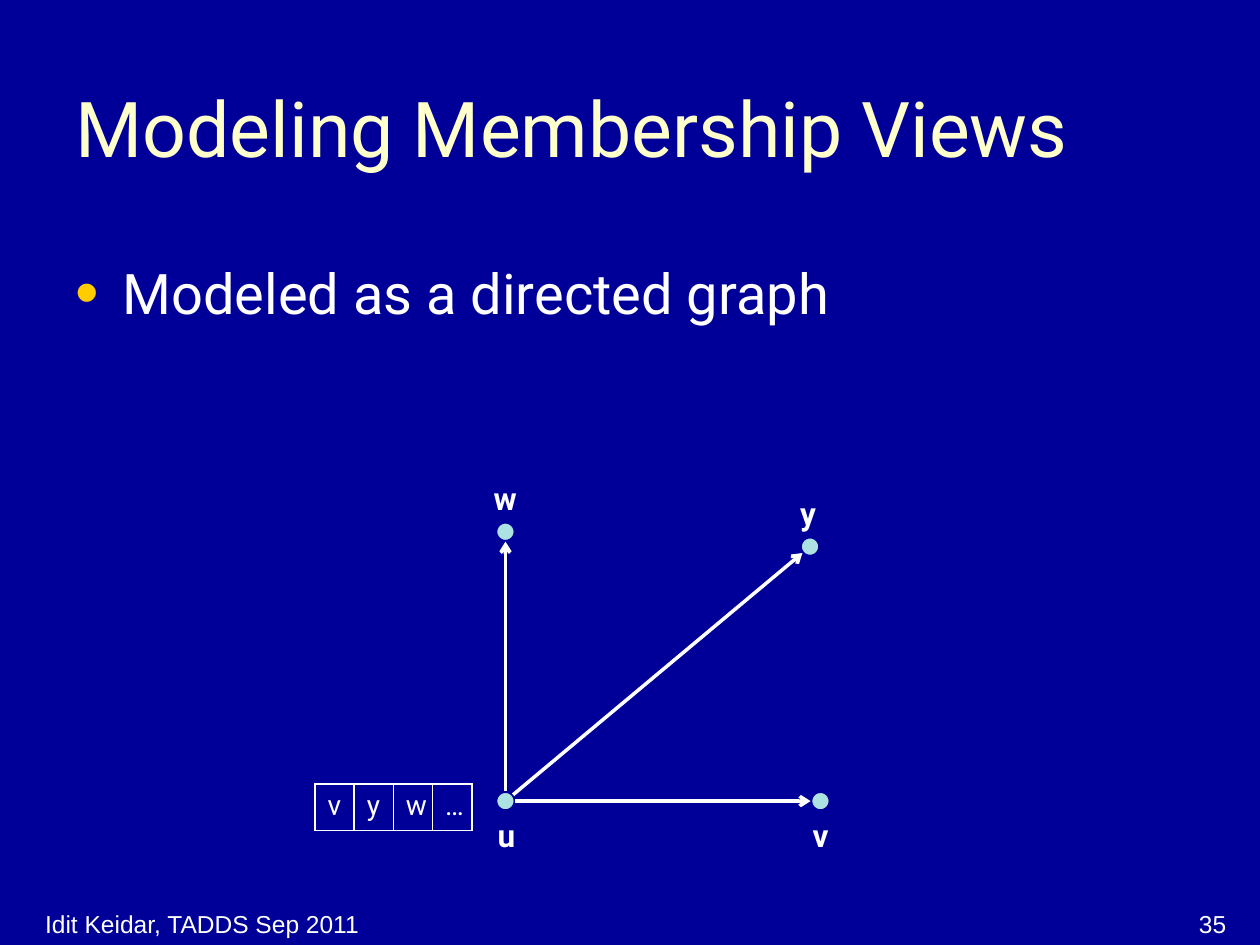
import math
from dataclasses import dataclass

import pptx
import pptx.dml.color
import pptx.enum.shapes
import pptx.enum.text
import pptx.oxml
import pptx.oxml.ns
import pptx.util
from lxml import etree

Cm = pptx.util.Cm
Pt = pptx.util.Pt
ANCHOR = pptx.enum.text.MSO_ANCHOR
ALIGN = pptx.enum.text.PP_ALIGN


@dataclass(frozen=True)
class Theme:
    background: str = "000099"
    title: str = "FFFFCC"
    text: str = "FFFFFF"
    bullet: str = "FFCC00"
    node: str = "ADE2E2"
    font: str = "Roboto"
    footer_font: str = "Arial"
    title_size: int = 44
    body_size: int = 32
    label_size: int = 18
    cell_size: int = 16
    footer_size: int = 14
    line: int = 2
    border: int = 1


THEME = Theme()
NODE_RADIUS = 0.2
LABEL_SIZE = (0.8, 1.02)
LABEL_ABOVE, LABEL_BELOW = -1.19, 0.18

# name: (centre x, centre y, label dx, label dy), in cm
NODES = {
    "w": (10.19, 10.72, -0.49, LABEL_ABOVE),
    "u": (10.19, 16.15, -0.41, LABEL_BELOW),
    "v": (16.54, 16.15, -0.41, LABEL_BELOW),
    "y": (16.33, 11.02, -0.45, LABEL_ABOVE),
}
EDGES = [("u", "w"), ("u", "v"), ("u", "y")]
VIEW = ["v", "y", "w", "…"]


def rgb(value):
    return pptx.dml.color.RGBColor.from_string(value)


def child(parent, tag, **attributes):
    return etree.SubElement(parent, pptx.oxml.ns.qn(tag), attributes)


def write(frame, text, size, color=THEME.text, font=THEME.font, bold=False,
          align=ALIGN.LEFT, anchor=ANCHOR.TOP, bullet=False):
    frame.word_wrap = True
    frame.vertical_anchor = anchor
    paragraph = frame.paragraphs[0]
    paragraph.alignment = align
    if bullet:
        add_bullet(paragraph)
    run = paragraph.add_run()
    run.text = text
    run.font.name = font
    run.font.size = Pt(size)
    run.font.bold = bold
    run.font.color.rgb = rgb(color)


def add_bullet(paragraph):
    properties = paragraph._p.get_or_add_pPr()
    indent = Cm(0.95)
    properties.set("marL", str(indent))
    properties.set("indent", str(-indent))
    child(child(properties, "a:buClr"), "a:srgbClr", val=THEME.bullet)
    child(properties, "a:buSzPct", val="120000")
    child(properties, "a:buFont", typeface="Arial")
    child(properties, "a:buChar", char="•")


def add_text(slide, left, top, width, height, text, size, **style):
    box = slide.shapes.add_textbox(Cm(left), Cm(top), Cm(width), Cm(height))
    write(box.text_frame, text, size, **style)


def add_node(slide, name):
    x, y, dx, dy = NODES[name]
    dot = slide.shapes.add_shape(
        pptx.enum.shapes.MSO_SHAPE.OVAL, Cm(x - NODE_RADIUS), Cm(y - NODE_RADIUS),
        Cm(2 * NODE_RADIUS), Cm(2 * NODE_RADIUS))
    dot.shadow.inherit = False
    dot.fill.solid()
    dot.fill.fore_color.rgb = rgb(THEME.node)
    dot.line.color.rgb = rgb(THEME.background)
    dot.line.width = Pt(THEME.line)
    add_text(slide, x + dx, y + dy, *LABEL_SIZE, name, THEME.label_size, bold=True)


def add_edge(slide, source, target):
    """Draw an arrow between the rims of two nodes."""
    x1, y1 = NODES[source][:2]
    x2, y2 = NODES[target][:2]
    length = math.hypot(x2 - x1, y2 - y1)
    dx = NODE_RADIUS * (x2 - x1) / length
    dy = NODE_RADIUS * (y2 - y1) / length
    arrow = slide.shapes.add_connector(
        pptx.enum.shapes.MSO_CONNECTOR.STRAIGHT,
        Cm(x1 + dx), Cm(y1 + dy), Cm(x2 - dx), Cm(y2 - dy))
    arrow.line.color.rgb = rgb(THEME.text)
    arrow.line.width = Pt(THEME.line)
    child(arrow.line._get_or_add_ln(), "a:tailEnd", type="arrow")
    child(arrow._element.spPr, "a:effectLst")


def add_borders(cell):
    properties = cell._tc.get_or_add_tcPr()
    for position, side in enumerate(("a:lnL", "a:lnR", "a:lnT", "a:lnB")):
        border = pptx.oxml.parse_xml(
            f'<{side} {pptx.oxml.ns.nsdecls("a")} w="{Pt(THEME.border)}"/>')
        child(child(border, "a:solidFill"), "a:srgbClr", val=THEME.text)
        properties.insert(position, border)


def add_view_table(slide, left, top, cell_width, height):
    table = slide.shapes.add_table(
        1, len(VIEW), Cm(left), Cm(top), Cm(cell_width * len(VIEW)), Cm(height)).table
    table.first_row = False
    table.horz_banding = False
    for column, member in enumerate(VIEW):
        table.columns[column].width = Cm(cell_width)
        cell = table.cell(0, column)
        cell.fill.background()
        add_borders(cell)
        write(cell.text_frame, member, THEME.cell_size)


def main():
    presentation = pptx.Presentation()
    presentation.slide_width = Cm(25.4)
    presentation.slide_height = Cm(19.05)
    slide = presentation.slides.add_slide(presentation.slide_layouts[6])
    slide.background.fill.solid()
    slide.background.fill.fore_color.rgb = rgb(THEME.background)

    add_text(slide, 1.27, 0.64, 22.86, 3.84, "Modeling Membership Views",
             THEME.title_size, color=THEME.title, anchor=ANCHOR.MIDDLE)
    add_text(slide, 1.27, 5.08, 22.86, 6.55, "Modeled as a directed graph",
             THEME.body_size, bullet=True)

    for name in NODES:
        add_node(slide, name)
    for source, target in EDGES:
        add_edge(slide, source, target)
    add_view_table(slide, 6.35, 15.8, 0.79, 0.94)

    footer = {"font": THEME.footer_font, "anchor": ANCHOR.BOTTOM}
    add_text(slide, 19.05, 17.96, 5.92, 1.09, "35", THEME.footer_size,
             align=ALIGN.RIGHT, **footer)
    add_text(slide, 0.66, 17.96, 8.43, 1.09, "Idit Keidar, TADDS Sep 2011",
             THEME.footer_size, **footer)

    presentation.save("out.pptx")


if __name__ == "__main__":
    main()
